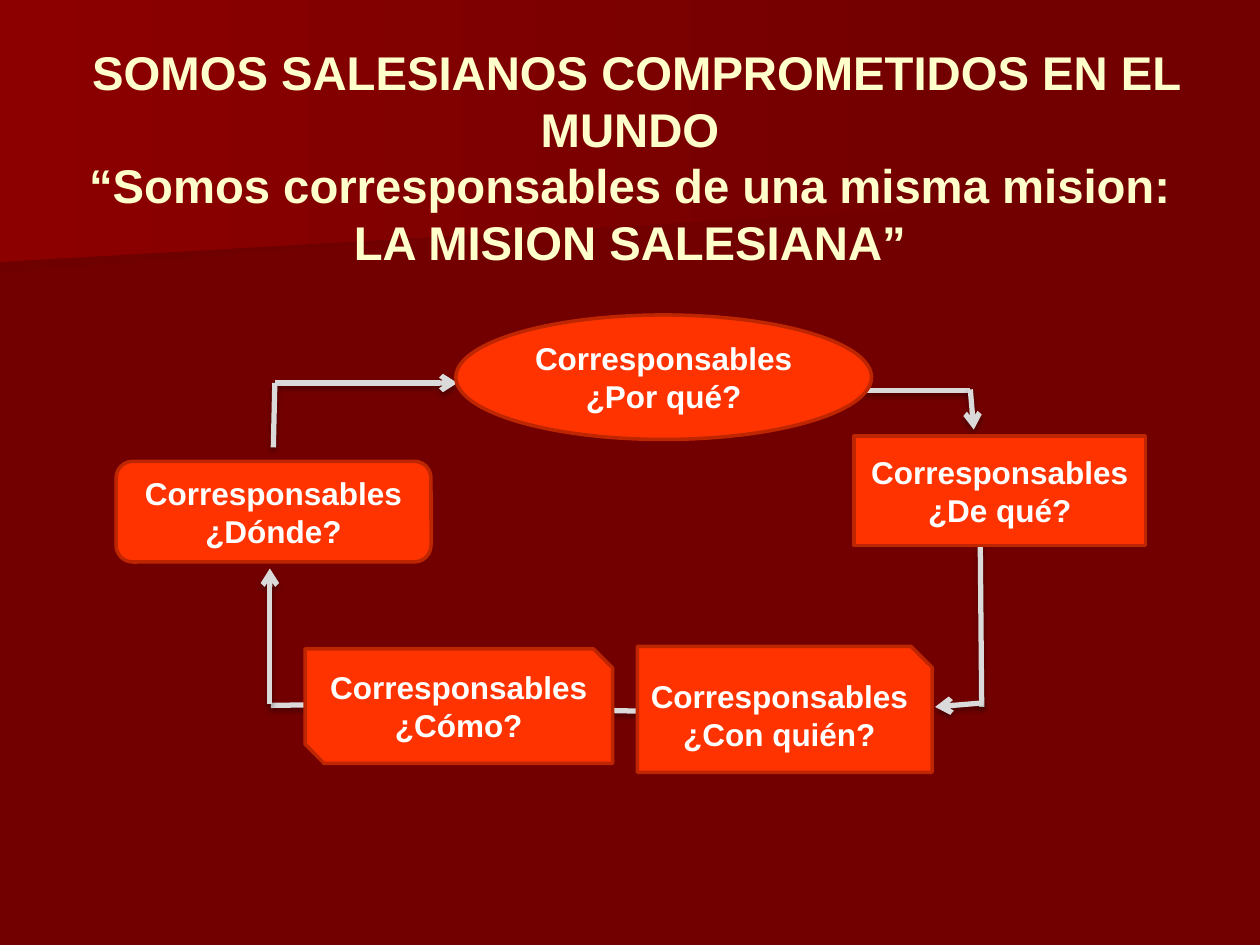
from lxml import etree
from pptx import Presentation
from pptx.dml.color import RGBColor
from pptx.enum.shapes import MSO_CONNECTOR, MSO_SHAPE as SHAPE
from pptx.enum.text import MSO_ANCHOR, PP_ALIGN
from pptx.oxml import parse_xml
from pptx.oxml.ns import nsdecls, qn
from pptx.util import Cm, Pt

TITLE = (" SOMOS SALESIANOS COMPROMETIDOS EN EL MUNDO\n"
         "“Somos corresponsables de una misma mision: LA MISION SALESIANA”")
BANDS = [
    ("6F0000", [(19.76, 3.89), (0, 5.51), (0, 2.57), (19.79, 2.57)]),
    ("8C0000", [(20.12, 4.11), (0, 5.28), (0, 0), (20.12, 0)]),
]
LINKS = [
    ((5.54, 7.72), (9.22, 7.72), True),
    ((5.51, 9.02), (5.54, 7.72), False),
    ((19.76, 10.87), (19.79, 14.25), False),
    ((19.81, 14.17), (18.85, 14.25), True),
    ((13.59, 14.35), (11.18, 14.3), True),
    ((6.86, 14.2), (5.46, 14.22), False),
    ((5.44, 14.2), (5.44, 11.46), True),
    ((15.6, 7.87), (19.56, 7.87), False),
    ((19.56, 7.85), (19.63, 8.66), True),
]
QUESTIONS = [
    ("¿Por qué?", SHAPE.OVAL, (9.19, 6.35, 8.38, 2.51)),
    ("¿De qué?", SHAPE.RECTANGLE, (17.22, 8.79, 5.87, 2.21)),
    ("¿Dónde?", SHAPE.ROUNDED_RECTANGLE, (2.34, 9.3, 6.35, 2.03)),
    ("¿Con quién?", SHAPE.SNIP_1_RECTANGLE, (12.85, 13.03, 5.94, 2.54)),
    ("¿Cómo?", SHAPE.SNIP_2_DIAG_RECTANGLE, (6.15, 13.08, 6.2, 2.31)),
]
SHADOW = (f'<a:effectLst {nsdecls("a")}><a:outerShdw blurRad="39370" dist="22860" '
          'dir="5400000" rotWithShape="0"><a:srgbClr val="000000">'
          '<a:alpha val="35000"/></a:srgbClr></a:outerShdw></a:effectLst>')


def color(value):
    return RGBColor.from_string(value)


def format_text(tf, size, value):
    tf.word_wrap = True
    tf.vertical_anchor = MSO_ANCHOR.MIDDLE
    for p in tf.paragraphs:
        p.alignment = PP_ALIGN.CENTER
        for r in p.runs:
            r.font.name = "Arial"
            r.font.size = Pt(size)
            r.font.bold = True
            r.font.color.rgb = color(value)


def add_band(s, start, points):
    points = [(Cm(x), Cm(y)) for x, y in points]
    builder = s.shapes.build_freeform(*points[0])
    builder.add_line_segments(points[1:], close=True)
    sp = builder.convert_to_shape()
    sp.shadow.inherit = False
    sp.line.fill.background()
    sp.fill.gradient()
    sp.fill.gradient_angle = 0
    for stop, value in zip(sp.fill.gradient_stops, (start, "720000")):
        stop.color.rgb = color(value)


def add_link(s, begin, end, arrow):
    ends = [Cm(v) for v in begin + end]
    link = s.shapes.add_connector(MSO_CONNECTOR.STRAIGHT, *ends)
    link.line.color.rgb = color("DADADA")
    link.line.width = Pt(3)
    if arrow:
        etree.SubElement(link.line._get_or_add_ln(), qn("a:tailEnd"), type="arrow")
    link._element.spPr.append(parse_xml(SHADOW))


def add_question(s, question, kind, box):
    sp = s.shapes.add_shape(kind, *[Cm(v) for v in box])
    sp.shadow.inherit = False
    sp.fill.solid()
    sp.fill.fore_color.rgb = color("FF3300")
    sp.line.color.rgb = color("BD2600")
    sp.line.width = Pt(2)
    sp.text_frame.text = f"Corresponsables\n{question}"
    format_text(sp.text_frame, 18, "FFFFFF")


def main():
    prs = Presentation()
    prs.slide_width, prs.slide_height = Cm(25.4), Cm(19.05)
    s = prs.slides.add_slide(prs.slide_layouts[6])
    s.background.fill.solid()
    s.background.fill.fore_color.rgb = color("720000")
    for band in BANDS:
        add_band(s, *band)
    for link in LINKS:
        add_link(s, *link)
    for question in QUESTIONS:
        add_question(s, *question)
    title = s.shapes.add_textbox(Cm(1.27), Cm(0.76), Cm(22.86), Cm(4.8))
    title.text_frame.paragraphs[0].text = TITLE
    format_text(title.text_frame, 27, "FFFFCC")
    prs.save("out.pptx")


if __name__ == "__main__":
    main()
